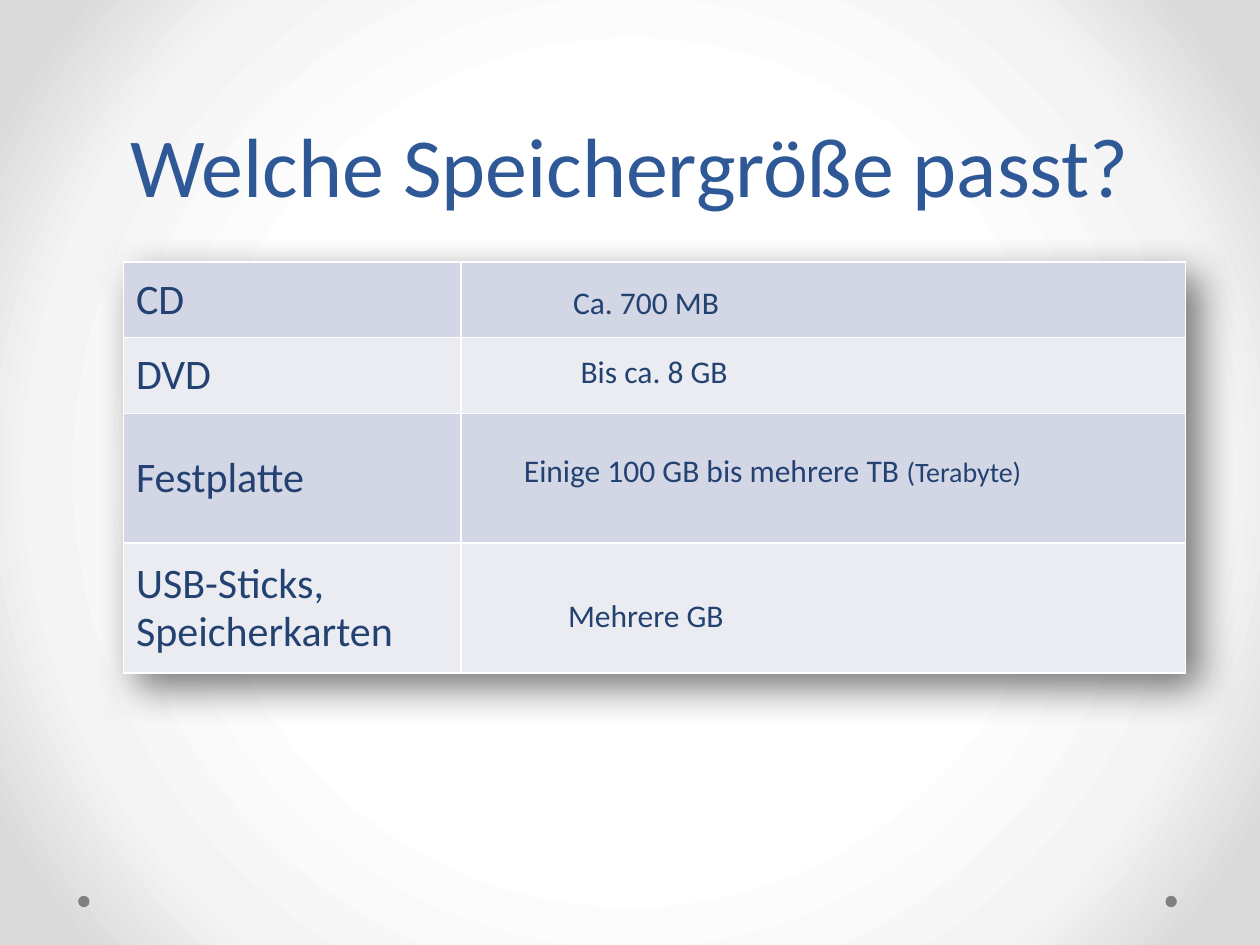
from pptx import Presentation
from pptx.dml.color import RGBColor
from pptx.enum import shapes, text
from pptx.oxml import parse_xml
from pptx.oxml.ns import nsdecls
from pptx.util import Inches, Pt

THEME = {
    "font": "Calibri",
    "title": "2F5897",
    "body": "234271",
    "bands": ("D2D6E5", "EAECF2"),
    "border": "FFFFFF",
    "dot": "808080",
    "shadow": "333333",
    "glow": ((50, "FFFFFF"), (76, "F4F4F4"), (92, "DADADA")),
    "sizes": {"title": 48, "label": 24, "answer": 18, "note": 16},
}
TITLE = "Welche Speichergröße passt?"
MEDIA = (("CD", 0.6), ("DVD", 0.6), ("Festplatte", 1.03), ("USB-Sticks, Speicherkarten", 1.03))
COLUMNS = (2.68, 5.75)
TABLE_AT = (0.98, 2.08)
ANSWERS = (
    ((4.45, 2.22, 1.37, 0.38), (("Ca. 700 MB", "answer"),)),
    ((4.51, 2.77, 1.38, 0.38), (("Bis ca. 8 GB", "answer"),)),
    ((4.06, 3.56, 4.2, 0.38), (("Einige 100 GB bis mehrere TB ", "answer"), ("(Terabyte)", "note"))),
    ((4.41, 4.71, 1.45, 0.38), (("Mehrere GB", "answer"),)),
)
DOTS = {"lefts": (9.25, 0.62), "top": 7.11, "size": 0.09}
FORMATS = {
    "title_frame": {"word_wrap": True, "vertical_anchor": text.MSO_ANCHOR.BOTTOM},
    "title_para": {"alignment": text.PP_ALIGN.CENTER, "line_spacing": Pt(58)},
    "answer_frame": {"word_wrap": False, "auto_size": text.MSO_AUTO_SIZE.SHAPE_TO_FIT_TEXT},
    "body_para": {"line_spacing": 0.93},
    "table": {"first_row": False, "horz_banding": False},
    "cell": {"vertical_anchor": text.MSO_ANCHOR.MIDDLE},
}


def apply(target, name):
    for key, value in FORMATS[name].items():
        setattr(target, key, value)


def paint(fill, color):
    fill.solid()
    fill.fore_color.rgb = RGBColor.from_string(color)


def write(frame, spans, para_format, color):
    para = frame.paragraphs[0]
    apply(para, para_format)
    for wording, size in spans:
        span = para.add_run()
        span.text = wording
        span.font.name = THEME["font"]
        span.font.size = Pt(THEME["sizes"][size])
        paint(span.font.fill, color)


def add_background(page):
    paint(page.background.fill, THEME["border"])
    solid = page.element.xpath("./p:cSld/p:bg/p:bgPr/a:solidFill")[0]
    stops = "".join(
        f'<a:gs pos="{place * 1000}"><a:srgbClr val="{color}"/></a:gs>' for place, color in THEME["glow"]
    )
    glow = parse_xml(
        f'<a:gradFill {nsdecls("a")} rotWithShape="1"><a:gsLst>{stops}</a:gsLst><a:path path="circle">'
        '<a:fillToRect l="50000" t="50000" r="50000" b="50000"/></a:path></a:gradFill>'
    )
    solid.getparent().replace(solid, glow)


def add_dots(page):
    for left in DOTS["lefts"]:
        at = map(Inches, (left, DOTS["top"], DOTS["size"], DOTS["size"]))
        dot = page.shapes.add_shape(shapes.MSO_SHAPE.OVAL, *at)
        dot.shadow.inherit = False
        paint(dot.fill, THEME["dot"])
        dot.line.fill.background()


def add_text(page, at, spans, role, para_format, color):
    box = page.shapes.add_textbox(*map(Inches, at))
    apply(box.text_frame, role)
    write(box.text_frame, spans, para_format, color)


def add_borders(cell):
    properties = cell._tc.get_or_add_tcPr()
    for side in "LRTB":
        properties.append(parse_xml(
            f'<a:ln{side} {nsdecls("a")} w="12700"><a:solidFill>'
            f'<a:srgbClr val="{THEME["border"]}"/></a:solidFill></a:ln{side}>'
        ))


def add_media_table(page):
    heights = [height for _, height in MEDIA]
    at = map(Inches, (*TABLE_AT, sum(COLUMNS), sum(heights)))
    table = page.shapes.add_table(len(MEDIA), len(COLUMNS), *at).table
    apply(table, "table")
    table._tbl.tblPr.insert(0, parse_xml(
        f'<a:effectLst {nsdecls("a")}><a:outerShdw blurRad="292100" dist="139700" dir="2700000" '
        f'algn="tl" rotWithShape="0"><a:srgbClr val="{THEME["shadow"]}"><a:alpha val="65000"/>'
        '</a:srgbClr></a:outerShdw></a:effectLst>'
    ))
    for column, width in zip(table.columns, COLUMNS):
        column.width = Inches(width)
    for index, (label, height) in enumerate(MEDIA):
        table.rows[index].height = Inches(height)
        for cell in table.rows[index].cells:
            apply(cell, "cell")
            add_borders(cell)
            paint(cell.fill, THEME["bands"][index % 2])
        write(table.cell(index, 0).text_frame, ((label, "label"),), "body_para", THEME["body"])


def main():
    """Build the storage size slide and save it."""
    deck = Presentation()
    deck.slide_width, deck.slide_height = Inches(10), Inches(7.5)
    page = deck.slides.add_slide(deck.slide_layouts[6])
    add_background(page)
    add_dots(page)
    add_text(page, (0.5, 0, 9, 1.75), ((TITLE, "title"),), "title_frame", "title_para", THEME["title"])
    add_media_table(page)
    for at, spans in ANSWERS:
        add_text(page, at, spans, "answer_frame", "body_para", THEME["body"])
    deck.save("out.pptx")


if __name__ == "__main__":
    main()
